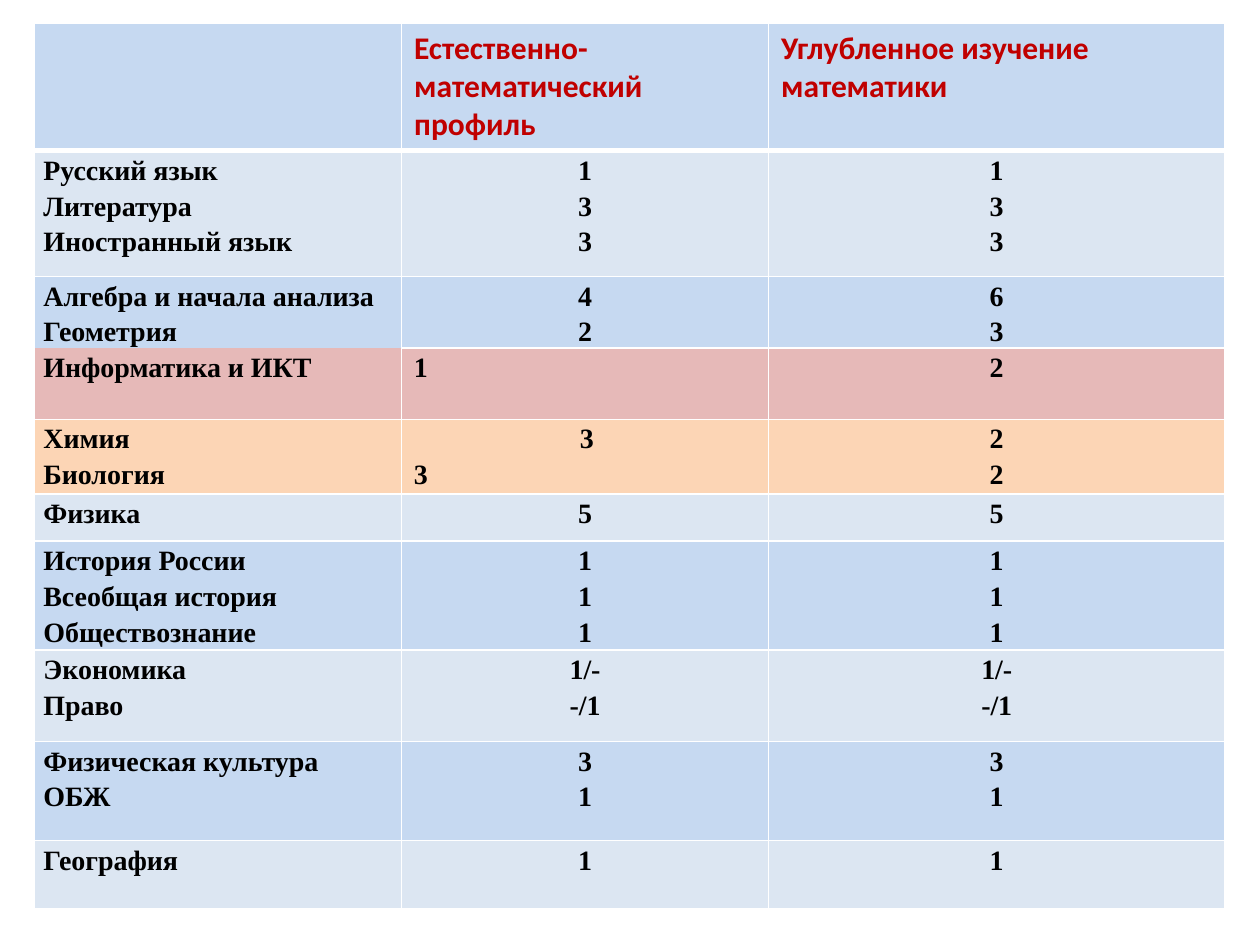
from lxml.etree import SubElement
from pptx import Presentation
from pptx.dml.color import RGBColor
from pptx.enum.text import PP_ALIGN as Align
from pptx.oxml.ns import qn
from pptx.util import Pt

THEME = {
    "blue": "C6D9F1", "pale": "DCE6F2", "rose": "E6B9B8", "peach": "FCD5B5",
    "border": "FFFFFF",
    "header": {"name": "Calibri", "size": Pt(18), "bold": True, "color": "C00000"},
    "body": {"name": "Times New Roman", "size": Pt(16), "bold": True, "color": "000000"},
    "line_spacing": 1.15,
}

HEADER = ["", "Естественно-математический профиль", "Углубленное изучение математики"]
HEADER_HEIGHT = 72.6

# Subjects, hours in the science profile, hours in advanced mathematics, fill, height
SUBJECT_GROUPS = [
    (["Русский язык", "Литература", "Иностранный язык"],
     ["1", "3", "3"], ["1", "3", "3"], "pale", 71.8),
    (["Алгебра и начала анализа", "Геометрия"], ["4", "2"], ["6", "3"], "blue", 40.4),
    (["Информатика и ИКТ"], [], [], "rose", 0),
    ([], ["1"], ["2"], "rose", 40.8),
    (["Химия", "Биология"], ["3", "3"], ["2", "2"], "peach", 42.6),
    (["Физика"], ["5"], ["5"], "pale", 27),
    (["История России", "Всеобщая история", "Обществознание"],
     ["1", "1", "1"], ["1", "1", "1"], "blue", 62.4),
    (["Экономика", "Право"], ["1/-", "-/1"], ["1/-", "-/1"], "pale", 52.2),
    (["Физическая культура", "ОБЖ"], ["3", "1"], ["3", "1"], "blue", 56.6),
    (["География"], ["1"], ["1"], "pale", 38.8),
]
# Top (row, column) of each cell that spans two rows
TWO_ROW_CELLS = [(2, 1), (2, 2), (3, 0)]
# (row, column, line) of the hours set flush left
FLUSH_LEFT = {(4, 1, 0), (5, 1, 1)}

TABLE_LEFT, TABLE_TOP = 19.8, 13
COLUMN_WIDTHS = [209.7, 209.7, 260.8]
HEADER_MARGINS = {"margin_left": Pt(7.2), "margin_right": Pt(7.2),
                  "margin_top": Pt(3.6), "margin_bottom": Pt(3.6)}
BODY_MARGINS = {"margin_left": Pt(5), "margin_right": Pt(5),
                "margin_top": 0, "margin_bottom": 0}


def apply(target, values):
    for attribute, value in values.items():
        setattr(target, attribute, value)


def add_borders(cell, widths):
    """Draw the left, right, top and bottom borders; they must precede the fill."""
    properties = cell._tc.get_or_add_tcPr()
    for side, width in zip(("lnL", "lnR", "lnT", "lnB"), widths):
        line = SubElement(properties, qn(f"a:{side}"), w=str(Pt(width)))
        fill = SubElement(line, qn("a:solidFill"))
        SubElement(fill, qn("a:srgbClr"), val=THEME["border"])


def style_cell(cell, fill, margins, border_widths):
    add_borders(cell, border_widths)
    cell.fill.solid()
    cell.fill.fore_color.rgb = RGBColor.from_string(THEME[fill])
    apply(cell, margins)


def write_lines(cell, lines, font, alignments, spacing=None):
    frame = cell.text_frame
    frame.text = "\n".join(lines)
    for paragraph, alignment in zip(frame.paragraphs, alignments):
        apply(paragraph, {"alignment": alignment, "line_spacing": spacing})
        for run in paragraph.runs:
            apply(run.font, {key: font[key] for key in ("name", "size", "bold")})
            run.font.color.rgb = RGBColor.from_string(font["color"])


def main():
    presentation = Presentation()
    apply(presentation, {"slide_width": Pt(720), "slide_height": Pt(540)})
    slide = presentation.slides.add_slide(presentation.slide_layouts[6])

    heights = [HEADER_HEIGHT] + [group[-1] for group in SUBJECT_GROUPS]
    timetable = slide.shapes.add_table(
        len(heights), len(COLUMN_WIDTHS), Pt(TABLE_LEFT), Pt(TABLE_TOP),
        Pt(sum(COLUMN_WIDTHS)), Pt(sum(heights))).table
    timetable.horz_banding = False
    for column, width in zip(timetable.columns, COLUMN_WIDTHS):
        column.width = Pt(width)
    for row, height in zip(timetable.rows, heights):
        row.height = Pt(height)
    for row, column in TWO_ROW_CELLS:
        timetable.cell(row, column).merge(timetable.cell(row + 1, column))

    for column, heading in enumerate(HEADER):
        cell = timetable.cell(0, column)
        style_cell(cell, "blue", HEADER_MARGINS, (1, 1, 1, 3))
        write_lines(cell, [heading], THEME["header"], [Align.LEFT])

    for row, (*columns, fill, _) in enumerate(SUBJECT_GROUPS, start=1):
        for column, lines in enumerate(columns):
            cell = timetable.cell(row, column)
            if cell.is_spanned:
                continue
            style_cell(cell, fill, BODY_MARGINS, (1, 1, 3 if row == 1 else 1, 1))
            alignments = [
                Align.LEFT if column == 0 or (row, column, line) in FLUSH_LEFT
                else Align.CENTER for line in range(len(lines))]
            if Align.LEFT in alignments and column > 0:
                cell.margin_left = Pt(7)
            write_lines(cell, lines, THEME["body"], alignments, THEME["line_spacing"])

    presentation.save("out.pptx")


if __name__ == "__main__":
    main()
